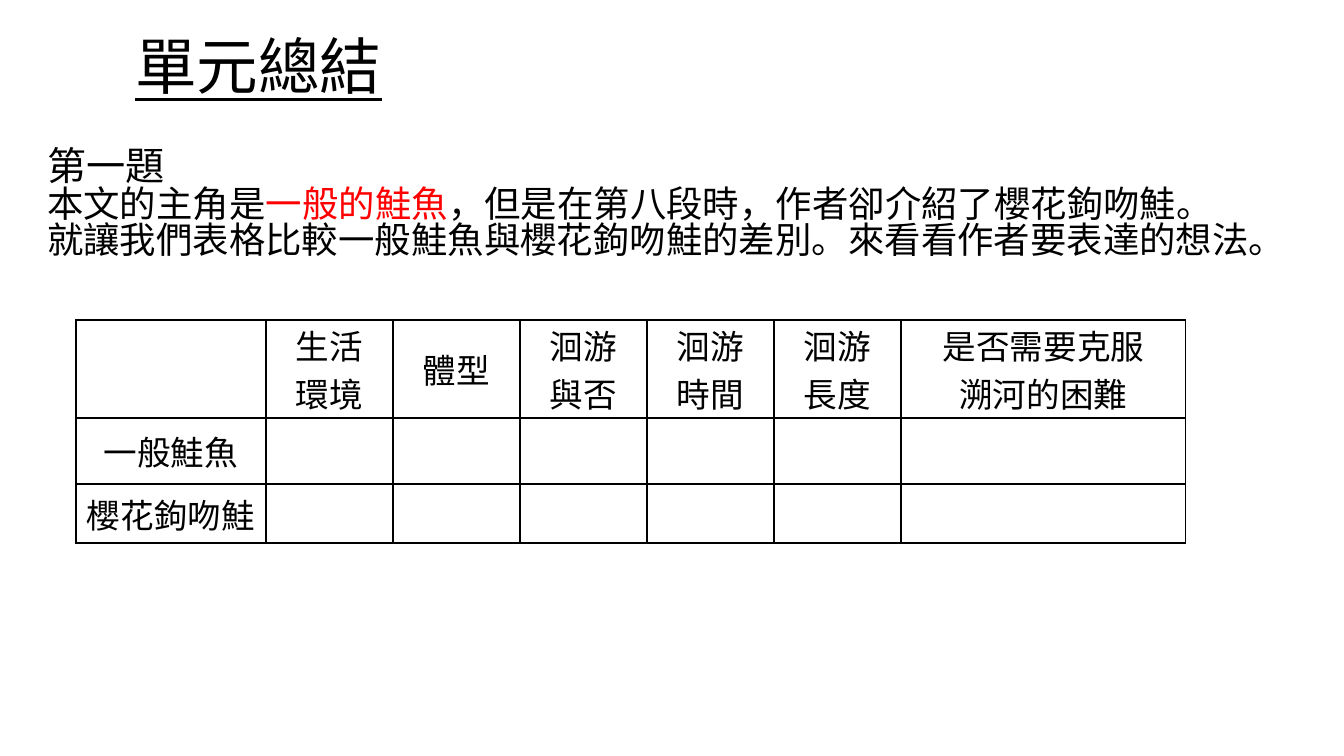
"""Build the unit summary slide with its salmon comparison table."""
from lxml.etree import SubElement as Sub
from pptx import Presentation
from pptx.dml.color import RGBColor as RGB
from pptx.enum.text import MSO_ANCHOR as Anchor, MSO_AUTO_SIZE as Fit, PP_ALIGN as Align
from pptx.oxml import parse_xml
from pptx.oxml.ns import nsdecls, qn
from pptx.util import Pt

PX = 914400 / 100.8
THEME = {
    "font": "Noto Sans CJK SC", "ink": "000000", "accent": "FF0000",
    "title": 44, "head": 28, "body": 26, "cell": 24,
}


def px(*nums):
    return [round(n * PX) for n in nums]


def style(run, size, color="ink"):
    font = run.font
    font.size = Pt(THEME[size])
    font.name = THEME["font"]
    font.color.rgb = RGB.from_string(THEME[color])
    Sub(font._element, qn("a:ea"), typeface=THEME["font"])


deck = Presentation()
deck.slide_width, deck.slide_height = px(1344, 756)
slide = deck.slides.add_slide(deck.slide_layouts[1])

title, body = slide.placeholders
title.left, title.top, title.width, title.height = px(125, 30, 1044, 80)
frame = title.text_frame
frame.text = "單元總結"
frame.auto_size = Fit.NONE
frame.vertical_anchor = Anchor.MIDDLE
line = frame.paragraphs[0]
line.alignment = Align.LEFT
line.line_spacing = 0.9
style(line.runs[0], "title")
line.runs[0].font.underline = True

body.left, body.top, body.width, body.height = px(37, 132, 1270, 146)
frame = body.text_frame
frame.text = "第一題\n本文的主角是"
frame.word_wrap = True
frame.auto_size = Fit.SHAPE_TO_FIT_TEXT
frame.vertical_anchor = Anchor.MIDDLE
head, task = frame.paragraphs
task.add_run().text = "一般的鮭魚"
task.add_run().text = "，但是在第八段時，作者卻介紹了櫻花鉤吻鮭。"
task.add_line_break()
task.add_run().text = "就讓我們表格比較一般鮭魚與櫻花鉤吻鮭的差別。來看看作者要表達的想法。"
for line, size in (head, "head"), (task, "body"):
    line.alignment = Align.LEFT
    line.space_before = Pt(0)
    line.line_spacing = 0.83
    props = line._p.get_or_add_pPr()
    props.set("marL", "0")
    props.set("indent", "0")
    Sub(props, qn("a:buNone"))
    for run in line.runs:
        style(run, size)
task.runs[1].font.color.rgb = RGB.from_string(THEME["accent"])

rows = [
    ["", "生活\n環境", "體型", "洄游\n與否", "洄游\n時間", "洄游\n長度", "是否需要克服\n溯河的困難"],
    ["一般鮭魚"] + [""] * 6,
    ["櫻花鉤吻鮭"] + [""] * 6,
]
wide = px(190, *[127] * 5, 285)
high = px(98, 66, 59)
grid = slide.shapes.add_table(3, 7, *px(76, 320), sum(wide), sum(high)).table
grid.first_row = grid.horz_banding = False
for col, width in zip(grid.columns, wide):
    col.width = width
for row, height, texts in zip(grid.rows, high, rows):
    row.height = height
    for cell, text in zip(row.cells, texts):
        cell.text = text
        cell.fill.background()
        cell.vertical_anchor = Anchor.MIDDLE
        cell.margin_left = cell.margin_right = px(0 if row is grid.rows[0] or "\n" in text else 7)[0]
        cell.margin_top = cell.margin_bottom = 0
        for line in cell.text_frame.paragraphs:
            line.alignment = Align.CENTER
            for run in line.runs:
                style(run, "cell")
        props = cell._tc.get_or_add_tcPr()
        for spot, side in enumerate("LRTB"):
            props.insert(spot, parse_xml(
                f'<a:ln{side} {nsdecls("a")} w="12700"><a:solidFill>'
                f'<a:srgbClr val="{THEME["ink"]}"/></a:solidFill></a:ln{side}>'))

deck.save("out.pptx")
